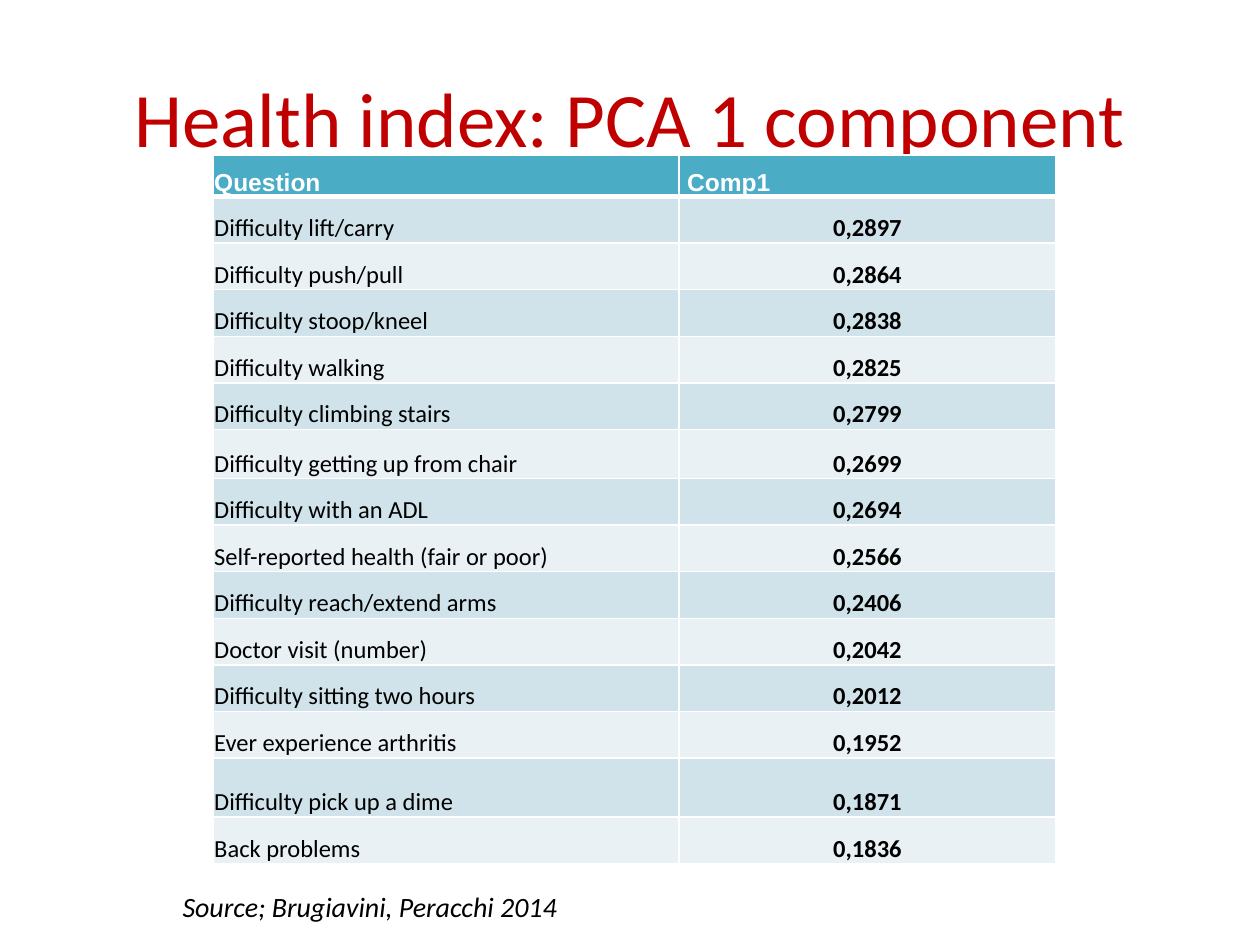
from lxml.etree import SubElement
from pptx import Presentation
from pptx.dml.color import RGBColor
from pptx.enum.text import MSO_ANCHOR as Anchor, MSO_AUTO_SIZE as AutoSize, PP_ALIGN as Align
from pptx.oxml.ns import qn
from pptx.util import Inches, Pt

COLORS = {
    "title": "C00000",
    "header": "4BACC6",
    "band_dark": "D0E3EA",
    "band_light": "E9F1F5",
    "white": "FFFFFF",
    "black": "000000",
}
QUESTIONS = [
    ("Difficulty lift/carry", "0,2897"),
    ("Difficulty push/pull", "0,2864"),
    ("Difficulty stoop/kneel", "0,2838"),
    ("Difficulty walking", "0,2825"),
    ("Difficulty climbing stairs", "0,2799"),
    ("Difficulty getting up from chair", "0,2699"),
    ("Difficulty with an ADL", "0,2694"),
    ("Self-reported health (fair or poor)", "0,2566"),
    ("Difficulty reach/extend arms", "0,2406"),
    ("Doctor visit (number)", "0,2042"),
    ("Difficulty sitting two hours", "0,2012"),
    ("Ever experience arthritis", "0,1952"),
    ("Difficulty pick up a dime", "0,1871"),
    ("Back problems", "0,1836"),
]
COLUMN_WIDTHS = (3.7, 2.99)
ROW_HEIGHT = 0.37
SPECIAL_HEIGHTS = {0: 0.33, 6: 0.39, 13: 0.47}


def write_text(frame, text, size=14, font="Calibri", color="black",
               bold=False, italic=False, align=Align.LEFT):
    """Fill a text frame with one formatted paragraph."""
    paragraph = frame.paragraphs[0]
    paragraph.alignment = align
    run = paragraph.add_run()
    run.text = text
    run.font.size = Pt(size)
    run.font.name = font
    run.font.bold = bold
    run.font.italic = italic
    run.font.color.rgb = RGBColor.from_string(COLORS[color])


def set_borders(cell, top, bottom):
    """Draw white borders, with top and bottom widths in points."""
    properties = cell._tc.get_or_add_tcPr()
    for side, width in (("L", 1), ("R", 1), ("T", top), ("B", bottom)):
        line = SubElement(properties, qn(f"a:ln{side}"), w=str(Pt(width)))
        fill = SubElement(line, qn("a:solidFill"))
        SubElement(fill, qn("a:srgbClr"), val=COLORS["white"])


def format_cell(cell, row):
    """Set the margins, borders and fill that belong to a row."""
    cell.vertical_anchor = Anchor.BOTTOM
    cell.margin_left = cell.margin_right = cell.margin_top = Inches(0.01)
    cell.margin_bottom = 0
    set_borders(cell, top=3 if row == 1 else 1, bottom=3 if row == 0 else 1)
    band = "band_dark" if row % 2 else "band_light"
    cell.fill.solid()
    cell.fill.fore_color.rgb = RGBColor.from_string(COLORS[band if row else "header"])


def add_title(slide, left, top, width, height):
    """Place and write the slide title."""
    title = slide.shapes.title
    title.left, title.top = Inches(left), Inches(top)
    title.width, title.height = Inches(width), Inches(height)
    title.text_frame.vertical_anchor = Anchor.MIDDLE
    write_text(title.text_frame, "Health index: PCA 1 component", size=44,
               color="title", align=Align.CENTER)


def add_loadings_table(slide, left, top):
    """Add the table of questions and first component loadings."""
    rows = [("Question", " Comp1"), *QUESTIONS]
    heights = [SPECIAL_HEIGHTS.get(row, ROW_HEIGHT) for row in range(len(rows))]
    table = slide.shapes.add_table(
        len(rows), len(COLUMN_WIDTHS), Inches(left), Inches(top),
        Inches(sum(COLUMN_WIDTHS)), Inches(sum(heights))).table
    for column, width in zip(table.columns, COLUMN_WIDTHS):
        column.width = Inches(width)
    for row, (texts, height) in enumerate(zip(rows, heights)):
        table.rows[row].height = Inches(height)
        for column, text in enumerate(texts):
            cell = table.cell(row, column)
            format_cell(cell, row)
            if row == 0:
                style = dict(font="Arial", color="white", bold=True)
            elif column == 1:
                style = dict(bold=True, align=Align.CENTER)
            else:
                style = {}
            write_text(cell.text_frame, text, **style)


def add_source(slide, left, top, width, height):
    """Add the source line below the table."""
    box = slide.shapes.add_textbox(Inches(left), Inches(top), Inches(width), Inches(height))
    box.text_frame.word_wrap = False
    box.text_frame.auto_size = AutoSize.SHAPE_TO_FIT_TEXT
    write_text(box.text_frame, "Source; Brugiavini, Peracchi 2014", size=16, italic=True)


def main():
    """Build and save the presentation."""
    presentation = Presentation()
    presentation.slide_width, presentation.slide_height = Inches(10), Inches(7.5)
    slide = presentation.slides.add_slide(presentation.slide_layouts[5])
    add_title(slide, 0.5, 0.3, 9, 1.25)
    add_loadings_table(slide, 1.69, 1.23)
    add_source(slide, 1.35, 7.01, 3.21, 0.37)
    presentation.save("out.pptx")


if __name__ == "__main__":
    main()
